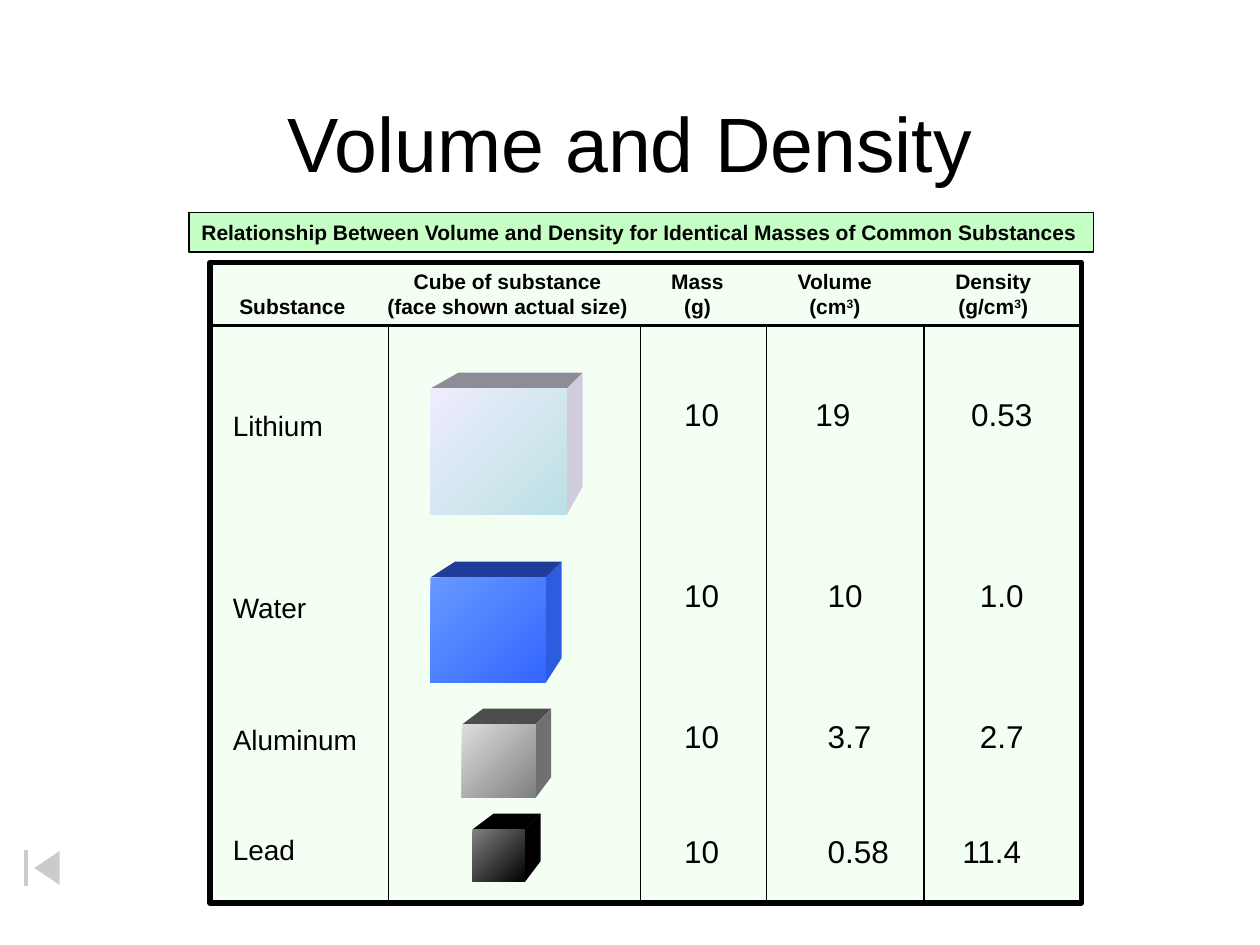
from dataclasses import dataclass

from lxml import etree
from pptx import Presentation
from pptx.dml.color import RGBColor
from pptx.enum import shapes as sh, text as tx
from pptx.oxml.ns import qn
from pptx.util import Pt

BLACK = RGBColor(0, 0, 0)
WHITE = RGBColor(255, 255, 255)
MINT = RGBColor(0x8D, 0xFF, 0x8D)
PALE = RGBColor(0xEB, 0xFF, 0xEB)
LILAC = RGBColor(0xEF, 0xED, 0xFD)
AQUA = RGBColor(0xBB, 0xE0, 0xE3)
MAUVE = RGBColor(0x8E, 0x8C, 0x96)
MIST = RGBColor(0xD0, 0xCC, 0xDC)
SKY = RGBColor(0x66, 0x99, 0xFF)
BLUE = RGBColor(0x33, 0x66, 0xFF)
NAVY = RGBColor(0x1F, 0x3D, 0x99)
ROYAL = RGBColor(0x2E, 0x5C, 0xE0)
SILVER = RGBColor(0xDD, 0xDD, 0xDD)
GREY = RGBColor(0x80, 0x80, 0x80)
COAL = RGBColor(0x4D, 0x4D, 0x4D)
STEEL = RGBColor(0x70, 0x70, 0x70)

FONT = "Arial"
DEPTH = 8.75  # shift of a cube's back face, right and up
LEFT, TOP, RIGHT, HEAD, BASE = 120, 150, 618, 186, 516


@dataclass
class Cube:
    left: float
    top: float
    width: float
    height: float
    lean: float  # how far the back face narrows
    light: RGBColor
    dark: RGBColor
    lid: RGBColor
    side: RGBColor


@dataclass
class Row:
    name: str
    mass: str
    volume: str
    density: str
    stops: tuple
    name_gap: float
    value_gap: float


CUBES = [
    Cube(246, 222, 78, 72, 15.5, LILAC, AQUA, MAUVE, MIST),
    Cube(246, 330, 66, 60, 14.5, SKY, BLUE, NAVY, ROYAL),
    Cube(264, 414, 42, 42, 12.5, SILVER, GREY, COAL, STEEL),
    Cube(270, 474, 30, 30, 11.5, GREY, BLACK, BLACK, BLACK),
]
ROWS = [
    Row("Lithium", "10", "19", "0.53", (75, 164), 0, 0),
    Row("Water", "10", "10", "1.0", (82, 169), 85, 82.2),
    Row("Aluminum", "10", "3.7", "2.7", (82, 169), 56, 58.7),
    Row("Lead", "10", "0.58", "11.4", (82, 159), 44, 43.9),
]
HEADS = [
    ["\t\tCube of substance\tMass\tVolume\tDensity"],
    ["\tSubstance\t(face shown actual size)\t(g)\t(cm", "3", ")\t(g/cm", "3", ")"],
]
HEAD_STOPS = (40, 163, 271.5, 350, 440.5)


def put(slide, kind, box, fill, line=None, weight=0.75):
    """Add a preset shape with a half transparent fill."""
    shape = slide.shapes.add_shape(kind, *map(Pt, box))
    shape.shadow.inherit = False
    shape.fill.solid()
    shape.fill.fore_color.rgb = fill
    tint = shape.fill._xPr.find(".//" + qn("a:srgbClr"))
    etree.SubElement(tint, qn("a:alpha"), val="50000")
    shape.line.color.rgb = line
    shape.line.width = Pt(weight)
    return shape


def write(par, words, size, bold=False, high=False):
    run = par.add_run()
    run.text = words
    font = run.font
    font.name, font.size, font.bold = FONT, Pt(size), bold
    font.color.rgb = BLACK
    if high:
        font._element.set("baseline", "30000")


def set_tabs(par, stops, align):
    tabs = etree.SubElement(par._p.get_or_add_pPr(), qn("a:tabLst"))
    for stop in stops:
        etree.SubElement(tabs, qn("a:tab"), pos=str(int(Pt(stop))), algn=align)


def text_box(slide, box, wrap=True):
    frame = slide.shapes.add_textbox(*map(Pt, box)).text_frame
    frame.word_wrap = wrap
    return frame


def next_par(frame, index, gap=0.0):
    par = frame.add_paragraph() if index else frame.paragraphs[0]
    par.alignment = tx.PP_ALIGN.LEFT
    par.space_before = Pt(gap)
    return par


def draw_face(slide, points, color):
    build = slide.shapes.build_freeform(*points[0], scale=Pt(1))
    build.add_line_segments(points[1:])
    face = build.convert_to_shape()
    face.shadow.inherit = False
    face.fill.solid()
    face.fill.fore_color.rgb = color
    face.line.fill.background()


def draw_cube(slide, cube):
    right, base = cube.left + cube.width, cube.top + cube.height
    back, high = right + DEPTH, cube.top - DEPTH
    near = (right, cube.top)
    draw_face(slide, [(cube.left, cube.top), (cube.left + cube.lean, high),
                      (back, high), near], cube.lid)
    draw_face(slide, [near, (back, high), (back, base - cube.lean),
                      (right, base)], cube.side)
    front = slide.shapes.add_shape(
        sh.MSO_SHAPE.RECTANGLE, Pt(cube.left), Pt(cube.top),
        Pt(cube.width), Pt(cube.height))
    front.shadow.inherit = False
    front.fill.gradient()
    front.fill.gradient_angle = 315
    for stop, color in zip(front.fill.gradient_stops, (cube.light, cube.dark)):
        stop.color.rgb = color
    front.line.fill.background()


def draw_rule(slide, start, end, weight):
    rule = slide.shapes.add_connector(
        sh.MSO_CONNECTOR.STRAIGHT, *map(Pt, start + end))
    rule.line.color.rgb = BLACK
    rule.line.width = Pt(weight)
    etree.SubElement(rule._element.spPr, qn("a:effectLst"))


def main():
    deck = Presentation()
    deck.slide_width, deck.slide_height = Pt(720), Pt(540)
    slide = deck.slides.add_slide(deck.slide_layouts[5])

    title = slide.shapes.title
    title.left, title.top, title.width, title.height = map(Pt, (54, 36, 612, 90))
    title.text_frame.vertical_anchor = tx.MSO_ANCHOR.MIDDLE
    par = title.text_frame.paragraphs[0]
    par.alignment = tx.PP_ALIGN.CENTER
    write(par, "Volume and Density", 44)

    rect = sh.MSO_SHAPE.RECTANGLE
    banner = put(slide, rect, (108, 121.5, 517, 22.5), MINT, BLACK).text_frame
    banner.word_wrap = False
    write(next_par(banner, 0), "Relationship Between Volume and Density for "
          "Identical Masses of Common Substances", 12, bold=True)
    put(slide, rect, (LEFT, TOP, RIGHT - LEFT, BASE - TOP), PALE, BLACK, 3)

    for cube in CUBES:
        draw_cube(slide, cube)

    heads = text_box(slide, (LEFT, TOP, 496, 36))
    for i, parts in enumerate(HEADS):
        par = next_par(heads, i)
        set_tabs(par, HEAD_STOPS, "ctr")
        for part in parts:
            write(par, part, 12, bold=True, high=part == "3")

    names = text_box(slide, (126, 229.7, 86, 267), wrap=False)
    values = text_box(slide, (383.8, 222, 214, 276))
    for i, row in enumerate(ROWS):
        write(next_par(names, i, row.name_gap), row.name, 16)
        par = next_par(values, i, row.value_gap)
        set_tabs(par, row.stops, "l")
        write(par, "\t".join((row.mass, row.volume, row.density)), 18)

    draw_rule(slide, (LEFT, HEAD), (RIGHT, HEAD), 2.25)
    for x in (222, 366, 438, 528):
        draw_rule(slide, (x, HEAD), (x, BASE), 1)

    put(slide, sh.MSO_SHAPE.ACTION_BUTTON_BEGINNING, (0, 482, 48, 28),
        WHITE, WHITE)
    deck.save("out.pptx")


if __name__ == "__main__":
    main()
